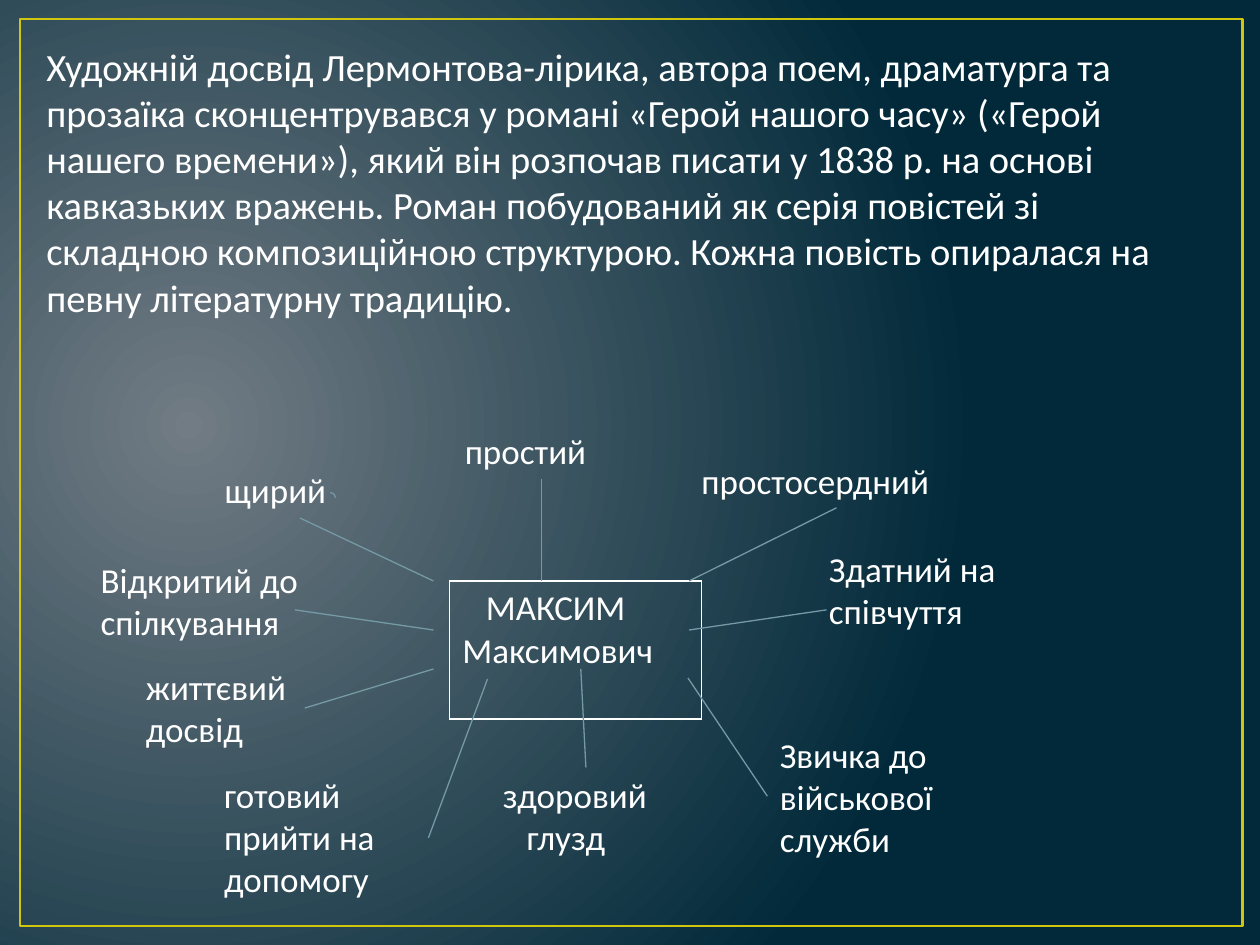
import pptx
import pptx.dml.color
import pptx.enum.shapes
import pptx.enum.text
import pptx.oxml
import pptx.oxml.ns
import pptx.util
from lxml import etree

Pt = pptx.util.Pt
qn = pptx.oxml.ns.qn
SHAPE = pptx.enum.shapes.MSO_SHAPE
COLORS = {"text": "FFFFFF", "frame": "CFC60D", "line": "759AA5",
          "glow": "717C84", "deep": "01293A"}


def rgb(name):
    return pptx.dml.color.RGBColor.from_string(COLORS[name])


class SlideBuilder:
    font = {"name": "Calibri", "size": Pt(20)}

    def __init__(self, s):
        self.s = s

    def background(self, inner, outer, focus):
        fill = self.s.background.fill
        fill.gradient()
        for stop, color in zip(fill.gradient_stops, (inner, outer)):
            stop.color.rgb = rgb(color)
        grad = self.s._element.find(".//" + qn("a:gradFill"))
        grad.remove(grad.find(qn("a:lin")))
        shade = etree.SubElement(grad, qn("a:path"), {"path": "circle"})
        sides = {side: str(pct * 1000) for side, pct in zip("ltrb", focus)}
        etree.SubElement(shade, qn("a:fillToRect"), sides)

    def outline(self, kind, box, color, width):
        sp = self.s.shapes.add_shape(kind, *map(Pt, box))
        sp.shadow.inherit = False
        sp.fill.background()
        sp.line.color.rgb = rgb(color)
        sp.line.width = Pt(width)

    def fill_text(self, tf, lines, **changes):
        """Each line is a pair of text and left indent."""
        for i, (text, indent) in enumerate(lines):
            p = tf.paragraphs[0] if i == 0 else tf.add_paragraph()
            if indent:
                p._p.get_or_add_pPr().set("marL", str(Pt(indent)))
            r = p.add_run()
            r.text = text
            for key, value in {**self.font, **changes}.items():
                setattr(r.font, key, value)
            r.font.color.rgb = rgb("text")

    def text(self, box, lines, **changes):
        tf = self.s.shapes.add_textbox(*map(Pt, box)).text_frame
        tf.word_wrap = True
        tf.auto_size = pptx.enum.text.MSO_AUTO_SIZE.SHAPE_TO_FIT_TEXT
        self.fill_text(tf, lines, **changes)

    def table(self, box, lines):
        table = self.s.shapes.add_table(1, 1, *map(Pt, box)).table
        table.first_row = table.horz_banding = False
        cell = table.cell(0, 0)
        tcPr = cell._tc.get_or_add_tcPr()
        for side in ("lnL", "lnR", "lnT", "lnB"):
            ln = etree.SubElement(tcPr, qn("a:" + side), {"w": str(Pt(1))})
            solid = etree.SubElement(ln, qn("a:solidFill"))
            etree.SubElement(solid, qn("a:srgbClr"), {"val": COLORS["text"]})
        cell.fill.background()
        self.fill_text(cell.text_frame, lines)

    def line(self, start, end):
        kind = pptx.enum.shapes.MSO_CONNECTOR.STRAIGHT
        c = self.s.shapes.add_connector(kind, *map(Pt, start + end))
        c.line.color.rgb = rgb("line")
        c.line.width = Pt(0.75)
        etree.SubElement(c._element.spPr, qn("a:effectLst"))


INTRO = (
    "Художній досвід Лермонтова-лірика, автора поем, драматурга та прозаїка "
    "сконцентрувався у романі «Герой нашого часу» («Герой нашего времени»), "
    "який він розпочав писати у 1838 р. на основі кавказьких вражень. Роман "
    "побудований як серія повістей зі складною композиційною структурою. "
    "Кожна повість опиралася на певну літературну традицію."
)

# Character traits: box, lines with their indents
TRAITS = [
    ((258.5, 242, 101.5, 31.5), [("простий", 0)]),
    ((275.8, 438.5, 118, 55.5), [("здоровий", 4.5), ("глузд", 18)]),
    ((112.3, 264.3, 118, 31.5), [("щирий", 9)]),
    ((50.4, 315.4, 140.4, 55.5), [("Відкритий до спілкування", 0)]),
    ((76.3, 376.6, 98, 55.5), [("життєвий досвід", 0)]),
    ((121, 438.5, 123.8, 80), [("готовий прийти на допомогу", 0)]),
    ((393.8, 259.2, 168.5, 31.5), [("простосердний", 0)]),
    ((466.6, 309.6, 146.2, 55.5), [("Здатний на співчуття", 0)]),
    ((438.5, 415.4, 140.4, 80), [("Звичка до військової служби", 0)]),
]

# Lines between the traits and the hero
LINKS = [
    ((171.4, 296), (247.7, 332)),
    ((309.6, 273.6), (309.6, 332)),
    ((478, 290.2), (393.8, 332)),
    ((472.3, 348.5), (393.8, 360)),
    ((168.5, 348.5), (247.7, 360)),
    ((174.2, 404.6), (247.7, 382.3)),
    ((438.5, 455), (393.1, 387.4)),
    ((334.8, 438.5), (331.9, 382.3)),
    ((244.8, 478.8), (278.6, 388)),
]


def main():
    prs = pptx.Presentation()
    prs.slide_width, prs.slide_height = Pt(720), Pt(540)
    b = SlideBuilder(prs.slides.add_slide(prs.slide_layouts[6]))

    # Background and frame
    b.background("glow", "deep", (15, 50, 85, 60))
    b.outline(SHAPE.RECTANGLE, (11.5, 10.8, 698.4, 518.4), "frame", 1.5)

    # Introduction
    b.text((19.4, 20.9, 674.6, 167), [(INTRO, 0)], size=Pt(22))

    # Hero and traits
    b.table((257, 332, 144, 79), [("МАКСИМ", 13.5), ("Максимович", 0)])
    for box, lines in TRAITS:
        b.text(box, lines)

    # Links
    b.outline(SHAPE.ARC, (185.8, 281.5, 5.8, 5.8), "line", 0.75)
    for start, end in LINKS:
        b.line(start, end)

    prs.save("out.pptx")


if __name__ == "__main__":
    main()
